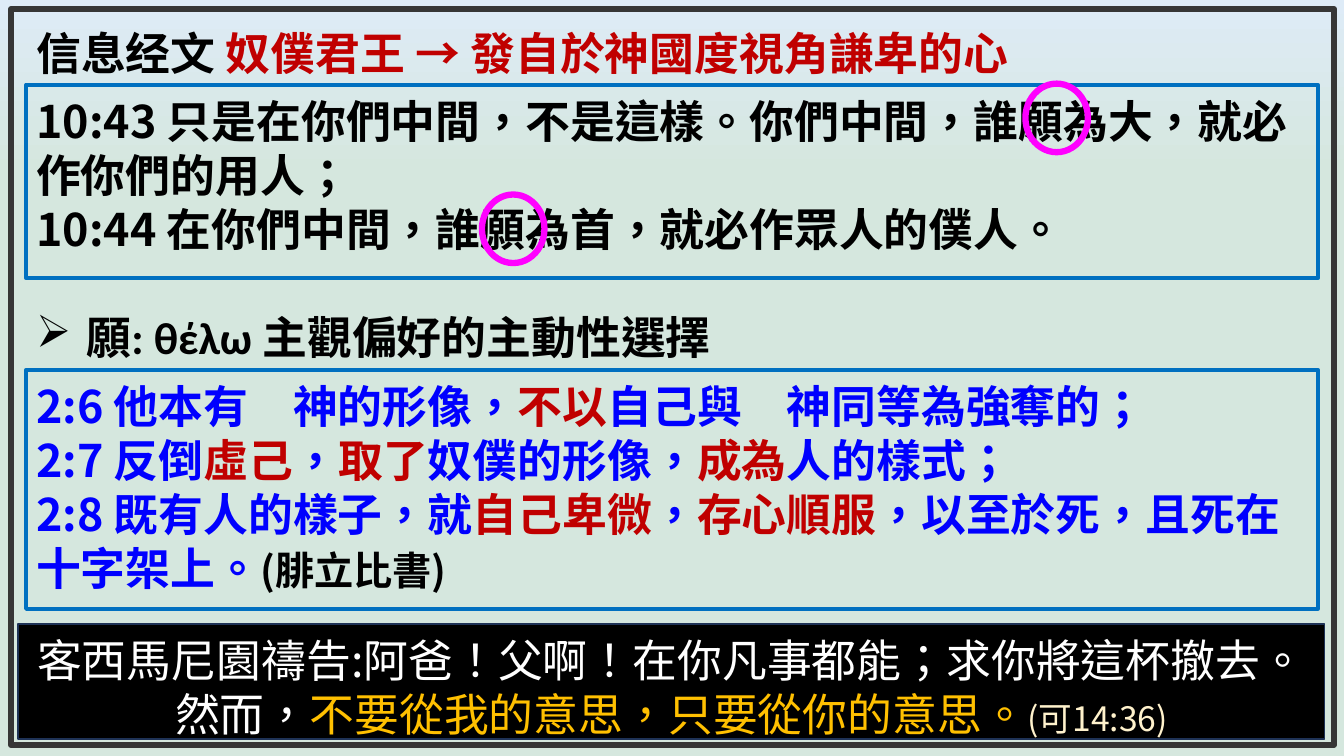
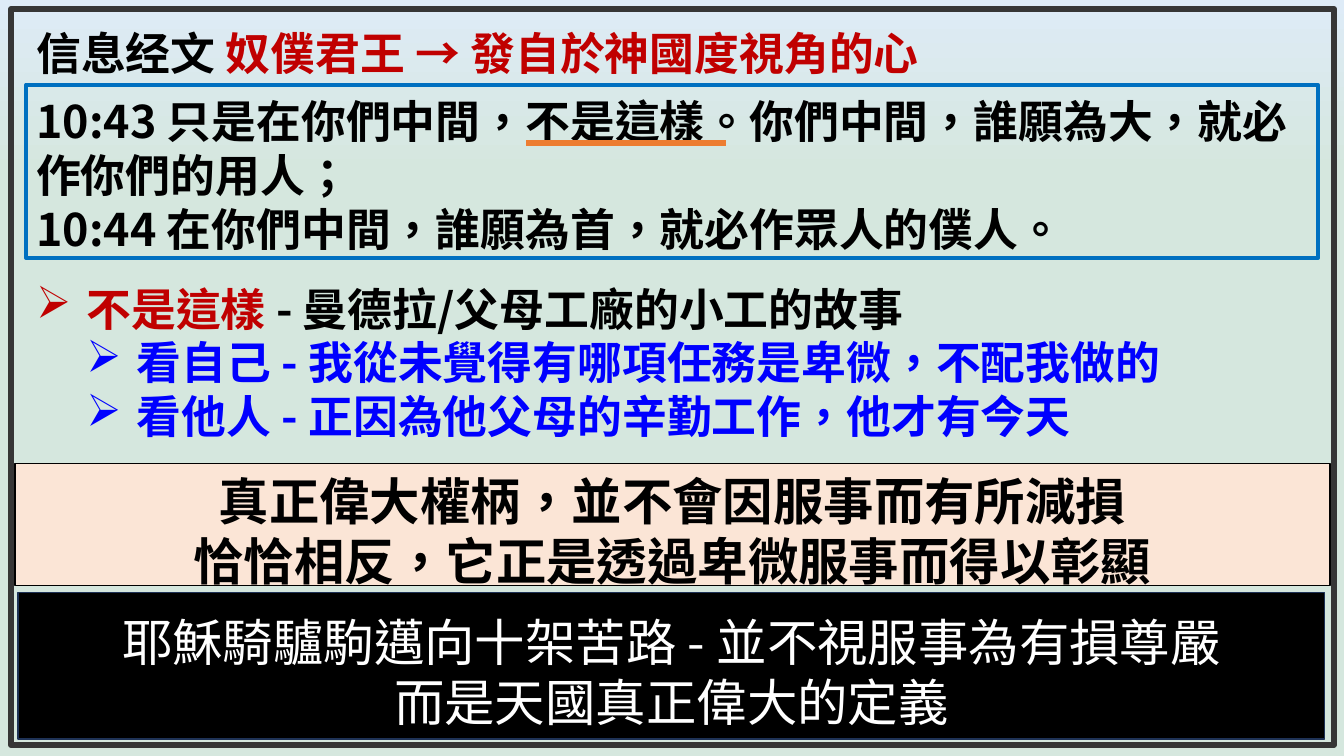
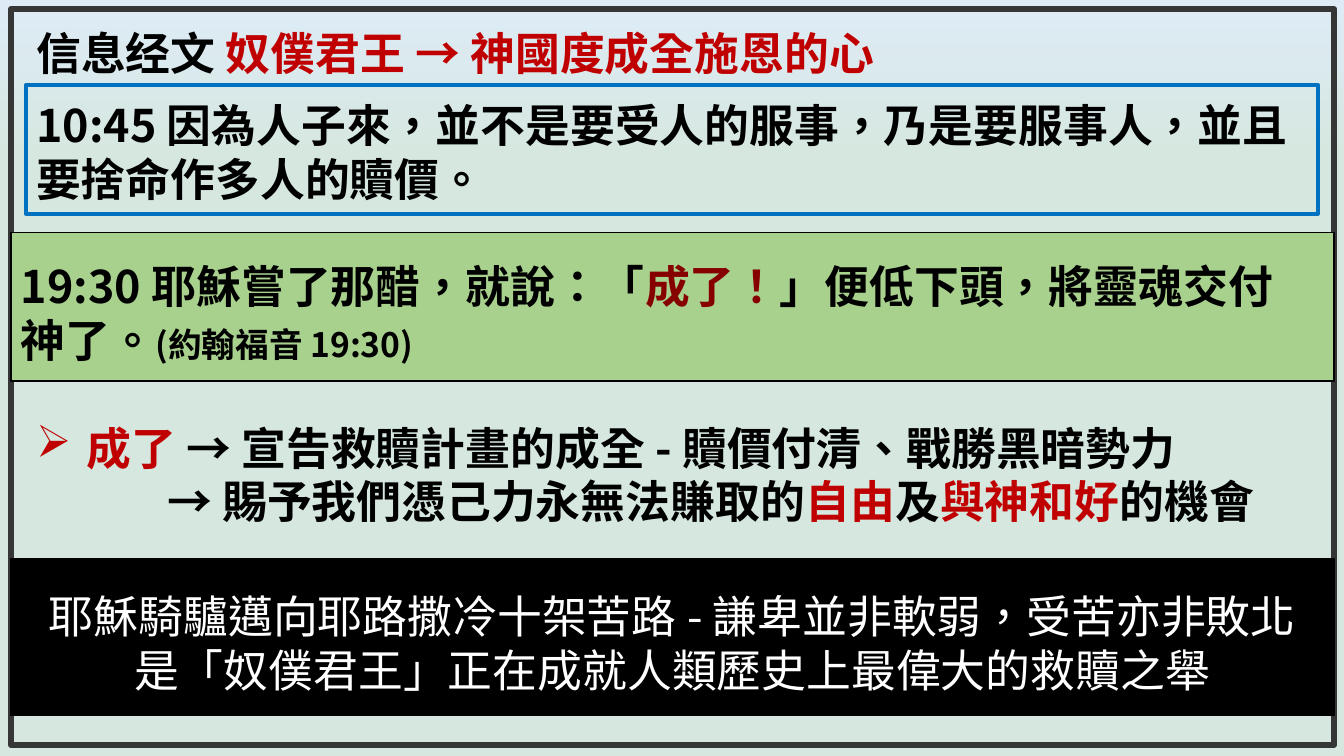
from dataclasses import dataclass

from lxml import etree
from pptx import Presentation
from pptx.dml.color import RGBColor
from pptx.enum.shapes import MSO_CONNECTOR, MSO_SHAPE
from pptx.enum.text import MSO_ANCHOR, MSO_AUTO_SIZE, PP_ALIGN
from pptx.oxml.ns import qn
from pptx.util import Inches, Pt


@dataclass(frozen=True)
class Theme:
    font: str = "Noto Sans CJK SC"
    greek_font: str = "Calibri"
    language: str = "zh-TW"
    body: int = 32
    large: int = 36
    note: int = 28
    small: int = 24
    line_ratio: float = 1.2
    black: str = "000000"
    white: str = "FFFFFF"
    red: str = "C00000"
    dark_red: str = "860000"
    blue: str = "0000FF"
    gold: str = "FFC000"
    cream: str = "FFF2CC"
    frame: str = "363636"
    panel: str = "0070C0"
    ring: str = "FF00FF"
    underline: str = "ED7D31"
    band_edge: str = "1E3256"
    peach: str = "FBE5D6"
    green: str = "A9D18E"
    sky: str = "DEEBF7"
    mint: str = "D5E7DE"


THEME = Theme()


@dataclass
class Run:
    text: str
    color: str = THEME.black
    size: int | None = None
    font: str | None = None


@dataclass
class Line:
    runs: list
    indent: float = 0
    bullet: bool = False


def rgb(value):
    return RGBColor.from_string(value)


# Text
def write_line(paragraph, line, size, bold, align):
    paragraph.alignment = align
    paragraph.line_spacing = Pt(round(size * THEME.line_ratio, 1))
    paragraph.space_before = paragraph.space_after = Pt(0)
    properties = paragraph._p.get_or_add_pPr()
    properties.set("marL", str(Inches(line.indent)))
    properties.set("indent", str(Inches(-0.5 if line.bullet else 0)))
    if line.bullet:
        etree.SubElement(properties, qn("a:buChar"), char="➢")
    else:
        etree.SubElement(properties, qn("a:buNone"))

    base_color = line.runs[0].color
    font = paragraph.font
    font.name, font.size, font.bold = THEME.font, Pt(size), bold
    font.color.rgb = rgb(base_color)
    defaults = properties.find(qn("a:defRPr"))
    defaults.set("lang", THEME.language)
    etree.SubElement(defaults, qn("a:ea"), typeface=THEME.font)

    for part in line.runs:
        run = paragraph.add_run()
        run.text = part.text
        if part.color != base_color:
            run.font.color.rgb = rgb(part.color)
        if part.size:
            run.font.size = Pt(part.size)
        if part.font:
            run.font.name = part.font


def write_text(shape, lines, size=THEME.body, bold=True, align=PP_ALIGN.LEFT,
               anchor=MSO_ANCHOR.TOP, top=0.0):
    frame = shape.text_frame
    frame.word_wrap = True
    frame.auto_size = MSO_AUTO_SIZE.NONE
    frame.vertical_anchor = anchor
    frame.margin_left = frame.margin_right = Inches(0.1)
    frame.margin_top, frame.margin_bottom = Inches(top), 0
    for index, line in enumerate(lines):
        paragraph = frame.add_paragraph() if index else frame.paragraphs[0]
        write_line(paragraph, line, size, bold, align)


# Shapes
def add_box(slide, box, line, width, fill=None, preset=MSO_SHAPE.RECTANGLE):
    shape = slide.shapes.add_shape(preset, *map(Inches, box))
    shape.shadow.inherit = False
    if fill:
        shape.fill.solid()
        shape.fill.fore_color.rgb = rgb(fill)
    else:
        shape.fill.background()
    shape.line.color.rgb = rgb(line)
    shape.line.width = Pt(width)
    return shape


def add_panel(slide, top, height, lines, inset=0.09):
    panel = add_box(slide, (0.26, top, 12.81, height), THEME.panel, 3)
    write_text(panel, lines, top=inset)


def add_points(slide, top, lines):
    height = len(lines) * 0.54
    box = slide.shapes.add_textbox(*map(Inches, (0.26, top, 12.96, height)))
    write_text(box, lines)


def add_band(slide, box, lines, fill=THEME.black, edge=THEME.black,
             size=THEME.body, bold=False, align=PP_ALIGN.CENTER):
    band = add_box(slide, box, edge, 1, fill)
    write_text(band, lines, size, bold, align, MSO_ANCHOR.MIDDLE, top=0.11)


def add_ring(slide, left, top):
    add_box(slide, (left, top, 0.62, 0.68), THEME.ring, 4.5, preset=MSO_SHAPE.OVAL)


def add_underline(slide, left, right, y):
    line = slide.shapes.add_connector(
        MSO_CONNECTOR.STRAIGHT, *map(Inches, (left, y, right, y)))
    line.line.color.rgb = rgb(THEME.underline)
    line.line.width = Pt(4.5)
    etree.SubElement(line._element.spPr, qn("a:effectLst"))


# Shared background, frame and title
def set_background(presentation):
    fill = presentation.slide_master.background.fill
    fill.gradient()
    fill.gradient_angle = 270
    stops = ((0, THEME.sky), (0.23, THEME.mint))
    for stop, (position, color) in zip(fill.gradient_stops, stops):
        stop.position = position
        stop.color.rgb = rgb(color)


def add_message_slide(presentation, heading):
    slide = presentation.slides.add_slide(presentation.slide_layouts[5])
    add_box(slide, (0.11, 0.09, 13.12, 7.3), THEME.frame, 4.5)
    title = slide.shapes.title
    title.left, title.top, title.width, title.height = map(
        Inches, (0.26, 0.25, 12.81, 0.54))
    write_text(title, [Line([Run("信息经文 "), Run(heading, THEME.red)])])
    return slide


GREATNESS_VERSES = [
    Line([Run("10:43 只是在你們中間，不是這樣。你們中間，誰願為大，就必作你們的用人；")]),
    Line([Run("10:44 在你們中間，誰願為首，就必作眾人的僕人。")]),
]


def build_willing_slide(presentation):
    red, blue = THEME.red, THEME.blue
    slide = add_message_slide(presentation, "奴僕君王 → 發自於神國度視角謙卑的心")
    add_panel(slide, 0.84, 1.92, GREATNESS_VERSES)
    add_ring(slide, 10.17, 0.83)
    add_ring(slide, 4.78, 1.93)
    # Meaning of the word
    add_points(slide, 3.07, [Line([
        Run("願"), Run(": θέλω ", font=THEME.greek_font),
        Run("主觀偏好的主動性選擇")], 0.5, True)])
    # Philippians
    add_panel(slide, 3.67, 2.37, [
        Line([Run("2:6 他本有　神的形像，", blue), Run("不以", red),
              Run("自己與　神同等為強奪的；", blue)]),
        Line([Run("2:7 反倒", blue), Run("虛己", red), Run("，", blue),
              Run("取了", red), Run("奴僕的形像，", blue),
              Run("成為", red), Run("人的樣式；", blue)]),
        Line([Run("2:8 既有人的樣子，就", blue), Run("自己卑微", red),
              Run("，", blue), Run("存心順服", red),
              Run("，以至於死，且死在十字架上。", blue),
              Run("(腓立比書)", size=THEME.note)]),
    ])
    # Prayer
    add_band(slide, (0.18, 6.19, 12.96, 1.14), [
        Line([Run("客西馬尼園禱告:阿爸！父啊！在你凡事都能；求你將這杯撤去。",
                  THEME.white)]),
        Line([Run("然而，", THEME.white),
              Run("不要從我的意思，只要從你的意思。", THEME.gold),
              Run("(可14:36)", THEME.cream, THEME.small)]),
    ], edge=THEME.band_edge)


def build_service_slide(presentation):
    slide = add_message_slide(presentation, "奴僕君王 → 發自於神國度視角的心")
    add_panel(slide, 0.84, 1.72, GREATNESS_VERSES)
    add_underline(slide, 5.22, 7.2, 1.42)
    # Stories
    add_points(slide, 2.79, [
        Line([Run("不是這樣 ", THEME.red),
              Run("- 曼德拉/父母工廠的小工的故事")], 0.5, True),
        Line([Run("看自己 - 我從未覺得有哪項任務是卑微，不配我做的", THEME.blue)], 1, True),
        Line([Run("看他人 - 正因為他父母的辛勤工作，他才有今天", THEME.blue)], 1, True),
    ])
    # Conclusions
    add_band(slide, (0.18, 5.88, 12.96, 1.45), [
        Line([Run("耶穌騎驢駒邁向十架苦路 - 並不視服事為有損尊嚴", THEME.white)]),
        Line([Run("而是天國真正偉大的定義", THEME.white)]),
    ], edge=THEME.band_edge, size=THEME.large)
    add_band(slide, (0.15, 4.6, 13.04, 1.21), [
        Line([Run("真正偉大權柄，並不會因服事而有所減損")]),
        Line([Run("恰恰相反，它正是透過卑微服事而得以彰顯")]),
    ], fill=THEME.peach, size=THEME.large, bold=True)


def build_redemption_slide(presentation):
    slide = add_message_slide(presentation, "奴僕君王 → 神國度成全施恩的心")
    add_panel(slide, 0.84, 1.28, [Line([Run(
        "10:45 因為人子來，並不是要受人的服事，乃是要服事人，並且要捨命作多人的贖價。")])],
        inset=0.13)
    # John
    add_band(slide, (0.11, 2.31, 13.12, 1.47), [Line([
        Run("19:30 耶穌嘗了那醋，就說：「"), Run("成了！", THEME.dark_red),
        Run("」便低下頭，將靈魂交付　\t神了。"),
        Run("(約翰福音 19:30)", size=THEME.small)])],
        fill=THEME.green, bold=True, align=PP_ALIGN.LEFT)
    # Meaning of the words
    add_points(slide, 4.17, [
        Line([Run("成了 ", THEME.red),
              Run("→ 宣告救贖計畫的成全 - 贖價付清、戰勝黑暗勢力")], 0.5, True),
        Line([Run("→ 賜予我們憑己力永無法賺取的"), Run("自由", THEME.red),
              Run("及"), Run("與神和好", THEME.red), Run("的機會")], 1.3),
    ])
    # Conclusion
    add_band(slide, (0.11, 5.54, 13.12, 1.56), [
        Line([Run("耶穌騎驢邁向耶路撒冷十架苦路 - 謙卑並非軟弱，受苦亦非敗北",
                  THEME.white)]),
        Line([Run("是「奴僕君王」正在成就人類歷史上最偉大的救贖之舉", THEME.white)]),
    ])


def main():
    presentation = Presentation()
    presentation.slide_width = Inches(13.33)
    presentation.slide_height = Inches(7.5)
    set_background(presentation)
    build_willing_slide(presentation)
    build_service_slide(presentation)
    build_redemption_slide(presentation)
    presentation.save("out.pptx")


if __name__ == "__main__":
    main()
